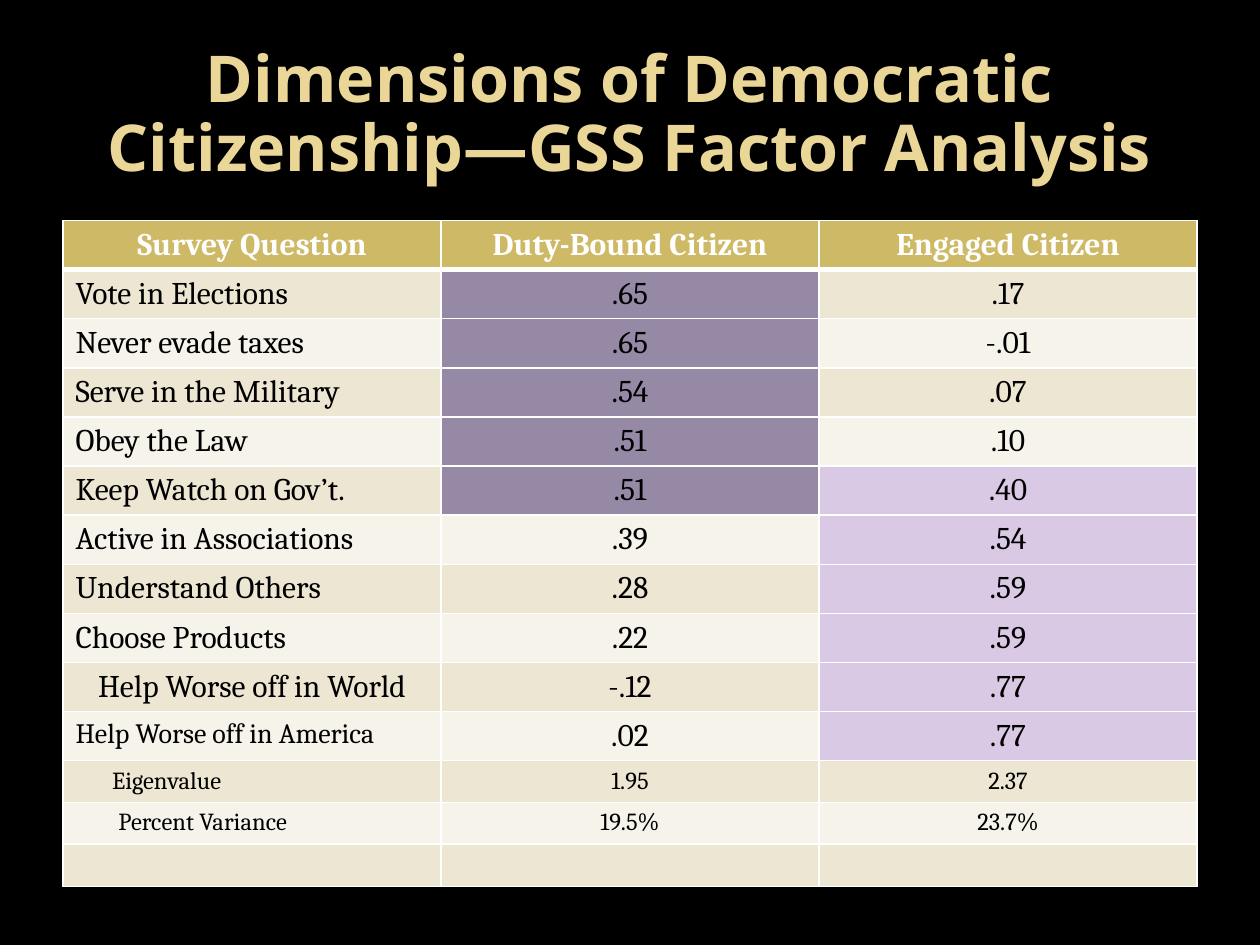
"""Build the slide on the dimensions of democratic citizenship."""
from dataclasses import dataclass
from typing import Any

from lxml.etree import SubElement
from pptx import Presentation
from pptx.dml.color import RGBColor as RGB
from pptx.enum.text import MSO_ANCHOR as Anchor, MSO_AUTO_SIZE as AutoSize, PP_ALIGN as Align
from pptx.oxml.ns import qn
from pptx.util import Inches, Pt

BLACK = RGB(0x00, 0x00, 0x00)
WHITE = RGB(0xFF, 0xFF, 0xFF)
TITLE_GOLD = RGB(0xEA, 0xD6, 0x96)
HEADER_GOLD = RGB(0xCE, 0xB9, 0x66)
BANDS = (RGB(0xED, 0xE6, 0xD3), RGB(0xF6, 0xF3, 0xEA))
HIGHLIGHTS = (RGB(0x96, 0x89, 0xA6), RGB(0xDA, 0xC9, 0xE4))
WIDTH, HEIGHT = Inches(10), Inches(7.5)
TALL, SHORT = Inches(0.39), Inches(0.33)
STRONG_LOADING = 0.4


@dataclass(frozen=True)
class Row:
    """One table row: a question or summary label with its two factor values."""
    label: str
    duty: str
    engaged: str
    label_size: int = 18
    size: int = 18
    align: Align = Align.LEFT
    indent: float = 0.1
    summary: bool = False


HEADER = Row("Survey Question", "Duty-Bound Citizen", "Engaged Citizen", align=Align.CENTER)
ROWS = (
    Row("Vote in Elections", ".65", ".17"),
    Row("Never evade taxes", ".65", "-.01"),
    Row("Serve in the Military", ".54", ".07"),
    Row("Obey the Law", ".51", ".10"),
    Row("Keep Watch on Gov’t.", ".51", ".40"),
    Row("Active in Associations", ".39", ".54"),
    Row("Understand Others", ".28", ".59"),
    Row("Choose Products", ".22", ".59"),
    Row("Help Worse off in World", "-.12", ".77", align=Align.CENTER),
    Row("Help Worse off in America", ".02", ".77", label_size=16),
    Row("Eigenvalue", "1.95", "2.37", 14, 14, indent=0.39, summary=True),
    Row("Percent Variance", "19.5%", "23.7%", 14, 14, indent=0.44, summary=True),
    Row("", "", "", 14, 14, summary=True),
)


def apply(target: Any, values: dict[str, Any]) -> None:
    """Set each named attribute on the target."""
    for name, value in values.items():
        setattr(target, name, value)


def set_borders(cell: Any, top: float, bottom: float) -> None:
    """Give a cell white borders; the sides are one point wide."""
    tc_pr = cell._tc.get_or_add_tcPr()
    for side, width in {"L": 1, "R": 1, "T": top, "B": bottom}.items():
        ln = SubElement(tc_pr, qn(f"a:ln{side}"), w=str(Pt(width)))
        fill = SubElement(ln, qn("a:solidFill"))
        SubElement(fill, qn("a:srgbClr"), val=str(WHITE))


def fill_cell(cell: Any, text: str, size: int, align: Align, color: RGB, bold: bool) -> None:
    """Write one formatted paragraph, keeping the size of an empty cell."""
    p = cell.text_frame.paragraphs[0]
    p.alignment = align
    if not text:
        p._p.get_or_add_endParaRPr().set("sz", str(size * 100))
        return
    r = p.add_run()
    r.text = text
    apply(r.font, {"name": "Cambria", "size": Pt(size), "bold": bold})
    r.font.color.rgb = color


def cell_color(row: Row, index: int, column: int) -> RGB:
    """Pick the header, highlight or band colour of a cell."""
    if index == 0:
        return HEADER_GOLD
    if column and not row.summary:
        value = (row.duty, row.engaged)[column - 1]
        if float(value) >= STRONG_LOADING:
            return HIGHLIGHTS[column - 1]
    return BANDS[(index - 1) % 2]


def add_title(slide: Any, text: str) -> None:
    """Place and format the title placeholder."""
    sp = slide.shapes.title
    apply(sp, {"left": int(WIDTH * 0.05), "top": int(HEIGHT * 0.04),
               "width": int(WIDTH * 0.9), "height": Inches(1.25)})
    tf = sp.text_frame
    apply(tf, {"word_wrap": True, "auto_size": AutoSize.NONE, "vertical_anchor": Anchor.MIDDLE})
    p = tf.paragraphs[0]
    apply(p, {"alignment": Align.CENTER, "line_spacing": 0.88})
    r = p.add_run()
    r.text = text
    apply(r.font, {"name": "Noto Sans", "size": Pt(36.9), "bold": True})
    r.font.color.rgb = TITLE_GOLD


def add_factor_table(slide: Any, rows: tuple[Row, ...]) -> None:
    """Draw the factor loadings, one table row per record."""
    heights = [SHORT if row.summary else TALL for row in rows]
    table = slide.shapes.add_table(len(rows), 3, int(WIDTH * 0.05), Inches(1.75),
                                   int(WIDTH * 0.9), sum(heights)).table
    for i, row in enumerate(rows):
        table.rows[i].height = heights[i]
        for j, text in enumerate((row.label, row.duty, row.engaged)):
            cell = table.cell(i, j)
            set_borders(cell, 3 if i == 1 else 1, 3 if i == 0 else 1)
            cell.fill.solid()
            cell.fill.fore_color.rgb = cell_color(row, i, j)
            cell.margin_left = Inches(0.1 if j else row.indent)
            fill_cell(cell, text, row.size if j else row.label_size,
                      Align.CENTER if j else row.align,
                      BLACK if i else WHITE, i == 0)


def main() -> None:
    """Build and save the presentation."""
    prs = Presentation()
    apply(prs, {"slide_width": WIDTH, "slide_height": HEIGHT})
    slide = prs.slides.add_slide(prs.slide_layouts[5])
    slide.background.fill.solid()
    slide.background.fill.fore_color.rgb = BLACK
    add_title(slide, "Dimensions of Democratic Citizenship—GSS Factor Analysis")
    add_factor_table(slide, (HEADER, *ROWS))
    prs.save("out.pptx")


if __name__ == "__main__":
    main()
